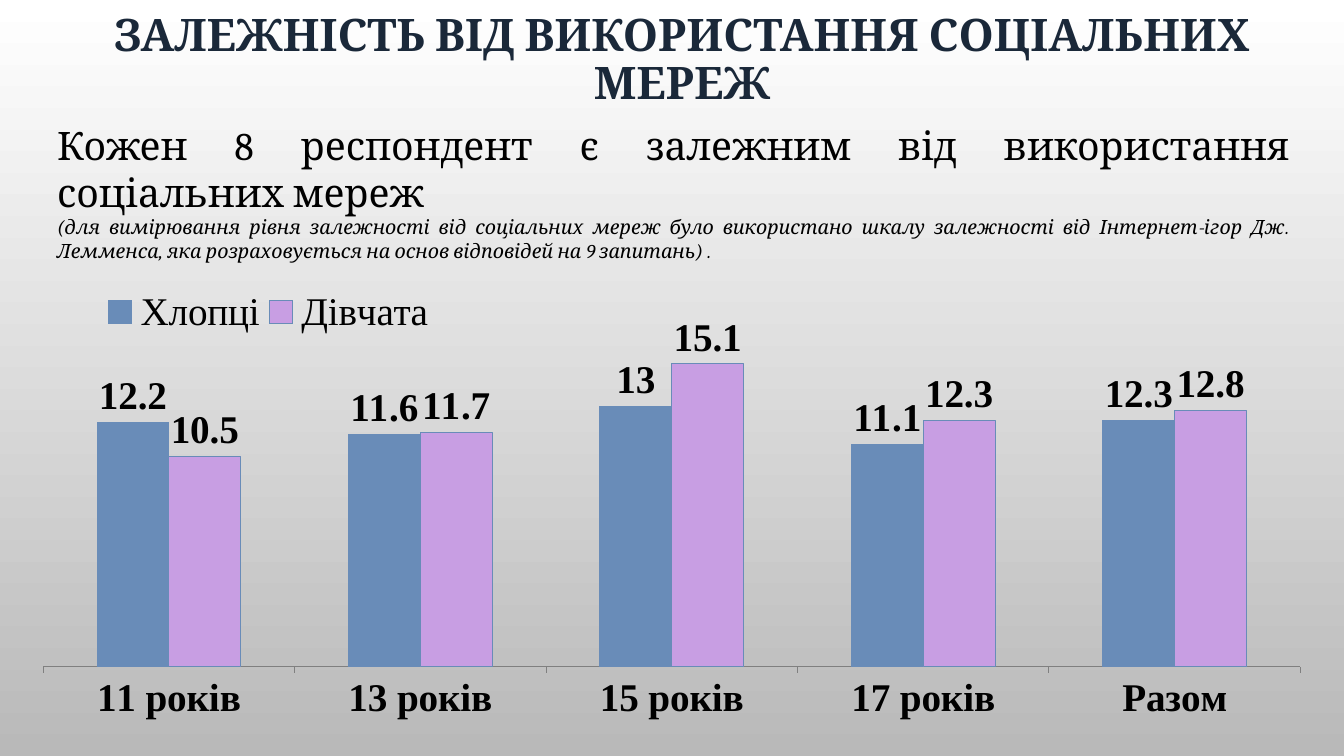
from lxml.etree import SubElement
from pptx import Presentation
from pptx.chart.data import CategoryChartData
from pptx.dml.color import RGBColor
from pptx.enum.chart import XL_CHART_TYPE as ChartType
from pptx.enum.chart import XL_LABEL_POSITION as LabelPosition
from pptx.enum.chart import XL_LEGEND_POSITION as LegendPosition
from pptx.enum.chart import XL_TICK_LABEL_POSITION as TickLabels
from pptx.enum.chart import XL_TICK_MARK as TickMark
from pptx.enum.text import MSO_ANCHOR as Anchor
from pptx.enum.text import MSO_AUTO_SIZE as AutoSize
from pptx.enum.text import PP_ALIGN as Align
from pptx.oxml.ns import qn
from pptx.util import Cm, Pt

WHITE = RGBColor(0xFF, 0xFF, 0xFF)
GREY = RGBColor(0xB9, 0xB9, 0xB9)
AXIS_GREY = RGBColor(0x80, 0x80, 0x80)
NAVY = RGBColor(0x1A, 0x28, 0x39)
BLACK = RGBColor(0, 0, 0)
BLUE = RGBColor(0x69, 0x8C, 0xB8)
LILAC = RGBColor(0xC8, 0x9E, 0xE3)

AGES = ["11 років", "13 років", "15 років", "17 років", "Разом"]
SHARES = [
    ("Хлопці", [12.2, 11.6, 13, 11.1, 12.3], BLUE),
    ("Дівчата", [10.5, 11.7, 15.1, 12.3, 12.8], LILAC),
]
FINDINGS = [
    ("Кожен 8 респондент є залежним від використання соціальних мереж", 28, False),
    ("(для вимірювання рівня залежності від соціальних мереж було використано "
     "шкалу залежності від Інтернет-ігор Дж. Лемменса, яка розраховується на "
     "основ відповідей на 9 запитань) .", 14, True),
]


def style_font(font, name, size, color=BLACK, bold=False, italic=False):
    font.name = name
    font.size = Pt(size)
    font.bold = bold
    font.italic = italic
    font.color.rgb = color


def paint_background(slide):
    fill = slide.background.fill
    fill.gradient()
    fill.gradient_angle = 270
    for stop, color, position in zip(fill.gradient_stops, (WHITE, GREY), (0, 1)):
        stop.color.rgb = color
        stop.position = position


def add_heading(slide, wording):
    heading = slide.shapes.title
    heading.left, heading.top = Cm(1.19), Cm(0.53)
    heading.width, heading.height = Cm(32), Cm(2)
    frame = heading.text_frame
    frame.text = wording
    frame.word_wrap = True
    frame.auto_size = AutoSize.NONE
    frame.vertical_anchor = Anchor.MIDDLE
    paragraph = frame.paragraphs[0]
    paragraph.alignment = Align.CENTER
    paragraph.line_spacing = 0.9
    style_font(paragraph.font, "Cambria", 32, NAVY, bold=True)


def add_findings(slide):
    frame = slide.shapes.add_textbox(Cm(1.19), Cm(2.92), Cm(31.55), Cm(2.64)).text_frame
    frame.word_wrap = True
    frame.text = "\n".join(wording for wording, _, _ in FINDINGS)
    for paragraph, (_, size, italic) in zip(frame.paragraphs, FINDINGS):
        paragraph.alignment = Align.JUSTIFY
        style_font(paragraph.font, "Cambria", size, italic=italic)


def set_layout(part, x, y, width, height, inner=False):
    layout = part.find(qn("c:layout"))
    if layout is None:
        layout = part.makeelement(qn("c:layout"))
        part.insert_element_before(layout, "c:overlay", "c:barChart")
    manual = SubElement(layout, qn("c:manualLayout"))
    settings = [("xMode", "edge"), ("yMode", "edge"),
                ("x", x), ("y", y), ("w", width), ("h", height)]
    if inner:
        settings.insert(0, ("layoutTarget", "inner"))
    for tag, value in settings:
        SubElement(manual, qn(f"c:{tag}")).set("val", str(value))


def style_axes(chart):
    ages = chart.category_axis
    ages.has_major_gridlines = False
    ages.major_tick_mark = TickMark.OUTSIDE
    ages.format.line.color.rgb = AXIS_GREY
    ages.format.line.width = Pt(0.75)
    style_font(ages.tick_labels.font, "Times New Roman", 28, bold=True)

    shares = chart.value_axis
    shares.minimum_scale, shares.maximum_scale = 0, 16
    shares.has_major_gridlines = False
    shares.major_tick_mark = TickMark.NONE
    shares.tick_label_position = TickLabels.NONE
    shares.format.line.fill.background()


def style_series(series, color):
    series.format.fill.solid()
    series.format.fill.fore_color.rgb = color
    series.format.line.color.rgb = BLUE
    series.format.line.width = Pt(0.75)
    labels = series.data_labels
    labels.show_value = True
    labels.position = LabelPosition.OUTSIDE_END
    style_font(labels.font, "Times New Roman", 28, bold=True)


def add_share_chart(slide):
    shares = CategoryChartData()
    shares.categories = AGES
    for name, values, _ in SHARES:
        shares.add_series(name, values)
    chart = slide.shapes.add_chart(
        ChartType.COLUMN_CLUSTERED, Cm(0.53), Cm(6.48), Cm(32.8), Cm(12.57), shares
    ).chart
    chart.has_title = False
    style_font(chart.font, "Calibri", 18)
    style_axes(chart)

    columns = chart.plots[0]
    columns.gap_width = 150
    columns.overlap = 0
    columns.vary_by_categories = False
    for series, (_, _, color) in zip(columns.series, SHARES):
        style_series(series, color)

    chart.has_legend = True
    legend = chart.legend
    legend.position = LegendPosition.BOTTOM
    legend.include_in_layout = False
    style_font(legend.font, "Times New Roman", 28)
    set_layout(legend._element, 0.06, 0.05, 0.26, 0.12)
    plot_area = chart._chartSpace.chart.plotArea
    set_layout(plot_area, 0.017, 0.178, 0.966, 0.643, inner=True)


def main():
    deck = Presentation()
    deck.slide_width, deck.slide_height = Cm(33.87), Cm(19.05)
    slide = deck.slides.add_slide(deck.slide_layouts[5])
    paint_background(slide)
    add_heading(slide, "ЗАЛЕЖНІСТЬ ВІД ВИКОРИСТАННЯ СОЦІАЛЬНИХ МЕРЕЖ")
    add_share_chart(slide)
    add_findings(slide)
    deck.save("out.pptx")


if __name__ == "__main__":
    main()
